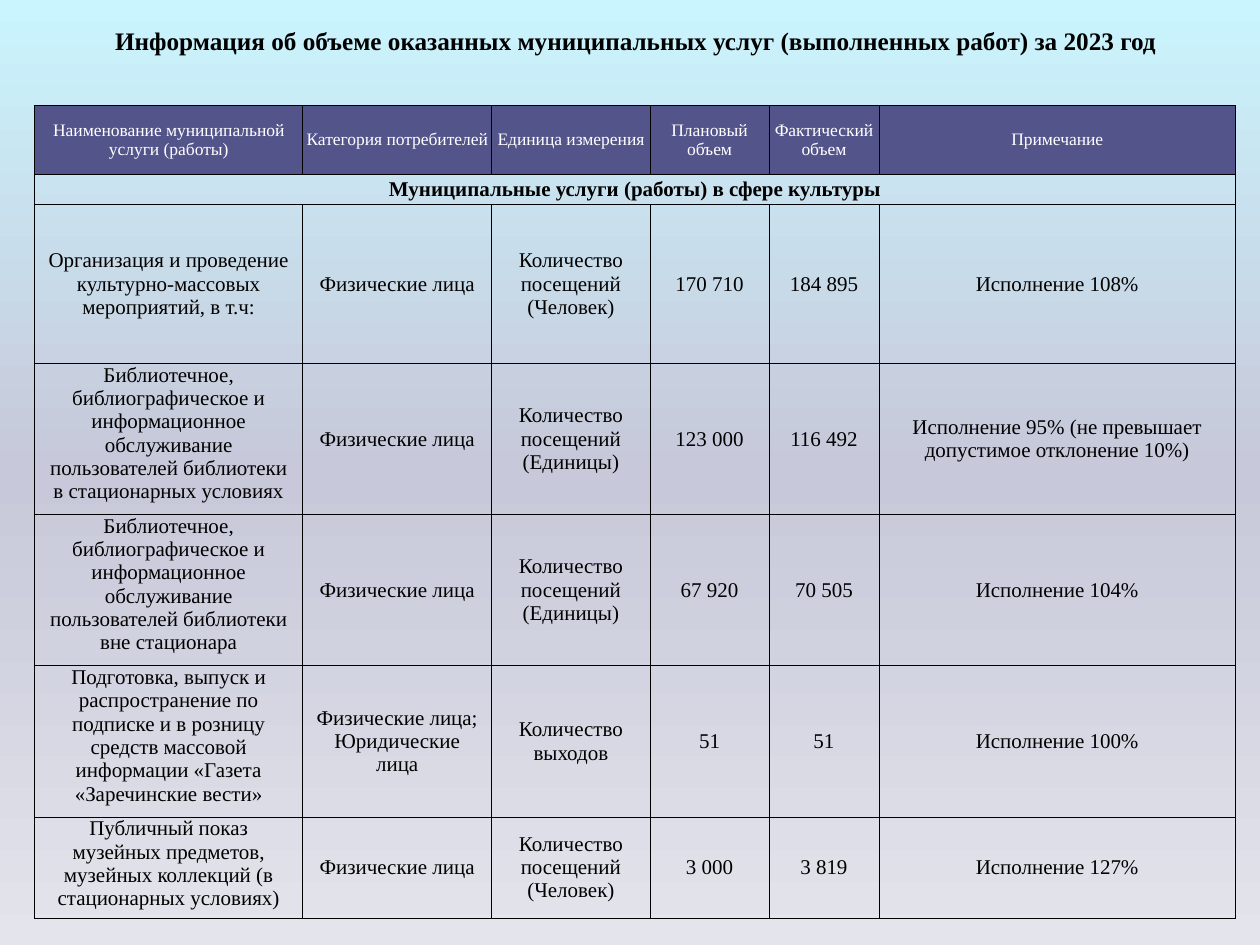
"""Build a slide with a table of municipal services delivered in 2023."""
from lxml.etree import SubElement
from pptx import Presentation
from pptx.dml.color import RGBColor
from pptx.enum.text import MSO_ANCHOR, PP_ALIGN
from pptx.oxml.ns import qn
from pptx.util import Pt

FONT = "Times New Roman"
BLACK, WHITE, HEADER_FILL = "000000", "FFFFFF", "53548A"
GRADIENT = [(0, "CAF4FE"), (50, "C7C8D9"), (100, "E4E4EC")]
TITLE = "Информация об объеме оказанных муниципальных услуг (выполненных работ) за 2023 год"
HEADERS = ["Наименование муниципальной услуги (работы)", "Категория потребителей",
           "Единица измерения", "Плановый объем", "Фактический объем", "Примечание"]
SECTION = "Муниципальные услуги (работы) в сфере культуры"
SERVICES = [
    ["Организация и проведение культурно-массовых мероприятий, в т.ч:", "Физические лица",
     "Количество посещений (Человек)", "170 710", "184 895", "Исполнение 108%"],
    ["Библиотечное, библиографическое и информационное обслуживание пользователей "
     "библиотеки в стационарных условиях", "Физические лица",
     "Количество посещений\n(Единицы)", "123 000", "116 492",
     "Исполнение 95% (не превышает допустимое отклонение 10%)"],
    ["Библиотечное, библиографическое и информационное обслуживание пользователей "
     "библиотеки вне стационара", "Физические лица",
     "Количество посещений\n(Единицы)", "67 920", "70 505", "Исполнение 104%"],
    ["Подготовка, выпуск и распространение по подписке и в розницу средств массовой "
     "информации «Газета «Заречинские вести»", "Физические лица; Юридические лица",
     "Количество выходов", "51", "51", "Исполнение 100%"],
    ["Публичный показ музейных предметов, музейных коллекций (в стационарных условиях)",
     "Физические лица", "Количество посещений\n(Человек)", "3 000", "3 819",
     "Исполнение 127%"],
]
COLUMN_WIDTHS = [153.2, 108, 90.5, 68, 62.8, 203.8]
ROW_HEIGHTS = [39.5, 17.2, 90.7, 80, 80, 80, 53.3]


def color(value):
    return RGBColor.from_string(value)


def add_text(frame, text, size, text_color=BLACK, bold=False):
    for index, line in enumerate(text.split("\n")):
        paragraph = frame.add_paragraph() if index else frame.paragraphs[0]
        paragraph.alignment = PP_ALIGN.CENTER
        run = paragraph.add_run()
        run.text = line
        run.font.name, run.font.size, run.font.bold = FONT, Pt(size), bold
        run.font.color.rgb = color(text_color)


def add_borders(cell):
    properties = cell._tc.get_or_add_tcPr()
    for side in ("a:lnL", "a:lnR", "a:lnT", "a:lnB"):
        line = SubElement(properties, qn(side), w=str(Pt(0.5)))
        fill = SubElement(line, qn("a:solidFill"))
        SubElement(fill, qn("a:srgbClr"), val=BLACK)


def paint_background(slide):
    fill = slide.background.fill
    fill.gradient()
    fill.gradient_angle = 270
    stops = slide.element.find(".//" + qn("a:gsLst"))
    stops.clear()
    for position, value in GRADIENT:
        stop = SubElement(stops, qn("a:gs"), pos=str(position * 1000))
        SubElement(stop, qn("a:srgbClr"), val=value)


def add_title(slide):
    frame = slide.shapes.add_textbox(Pt(42.5), Pt(9.4), Pt(641.5), Pt(28)).text_frame
    frame.word_wrap = True
    frame.vertical_anchor = MSO_ANCHOR.MIDDLE
    add_text(frame, TITLE, 14.4, bold=True)


def add_services_table(slide):
    rows = [HEADERS, [SECTION] + [""] * 5] + SERVICES
    table = slide.shapes.add_table(len(rows), len(HEADERS), Pt(19.8), Pt(60.3),
                                   Pt(sum(COLUMN_WIDTHS)), Pt(sum(ROW_HEIGHTS))).table
    table.first_row = table.horz_banding = False
    for column, width in zip(table.columns, COLUMN_WIDTHS):
        column.width = Pt(width)
    for row, height in zip(table.rows, ROW_HEIGHTS):
        row.height = Pt(height)
    table.cell(1, 0).merge(table.cell(1, len(HEADERS) - 1))
    for row_index, row in enumerate(rows):
        for column_index, text in enumerate(row):
            cell = table.cell(row_index, column_index)
            cell.margin_top = cell.margin_bottom = 0
            cell.margin_left = cell.margin_right = Pt(5 if row_index > 1 else 0)
            top = row_index > 2 and column_index == 0
            cell.vertical_anchor = MSO_ANCHOR.TOP if top else MSO_ANCHOR.MIDDLE
            add_borders(cell)
            if row_index == 0:
                cell.fill.solid()
                cell.fill.fore_color.rgb = color(HEADER_FILL)
                add_text(cell.text_frame, text, 10, WHITE)
            else:
                cell.fill.background()
                if text:
                    add_text(cell.text_frame, text, 12, bold=row_index == 1)


def main():
    presentation = Presentation()
    presentation.slide_width, presentation.slide_height = Pt(720), Pt(540)
    slide = presentation.slides.add_slide(presentation.slide_layouts[6])
    paint_background(slide)
    add_title(slide)
    add_services_table(slide)
    presentation.save("out.pptx")


if __name__ == "__main__":
    main()
